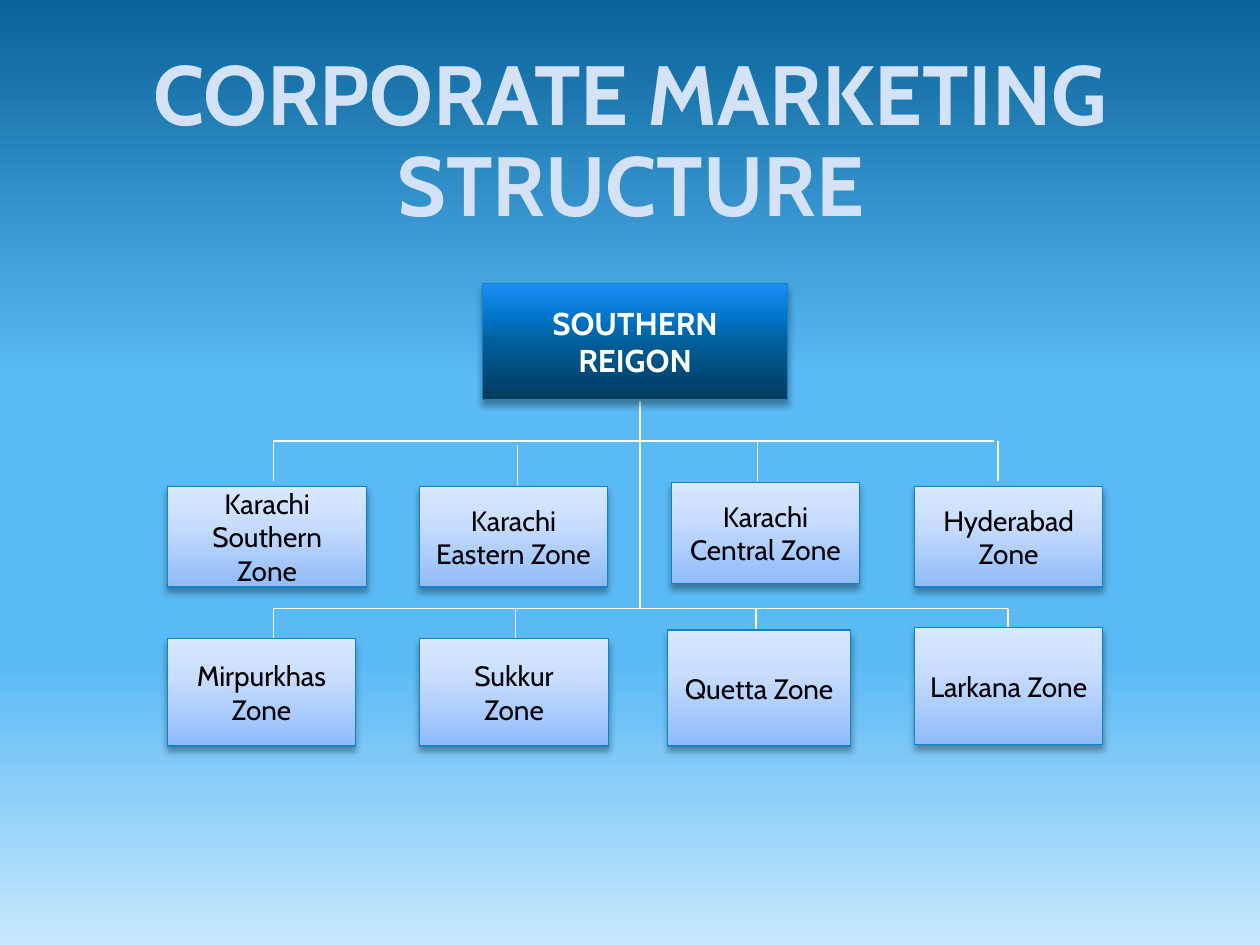
from lxml.etree import SubElement
from pptx import Presentation
from pptx.dml.color import RGBColor
from pptx.enum.shapes import MSO_CONNECTOR, MSO_SHAPE
from pptx.enum.text import MSO_ANCHOR, PP_ALIGN
from pptx.oxml.ns import qn
from pptx.util import Inches, Pt

SKY = [(0, "0A639A"), (40, "5ABAF5"), (70, "5ABAF5"), (100, "C8E8FC")]
PALE_BLUE = [(0, "90BBF9"), (65, "C9DEFF"), (100, "D9E7FF")]
DEEP_BLUE = [(0, "003B60"), (50, "005F9A"), (70, "0074C8"), (100, "1C8FF6")]

ZONES = [
    ("Karachi Southern Zone", 1.33, 3.86, 1.58, 0.8),
    ("Karachi Eastern Zone", 3.33, 3.86, 1.49, 0.8),
    ("Karachi Central Zone", 5.33, 3.83, 1.49, 0.8),
    ("Hyderabad Zone", 7.26, 3.86, 1.49, 0.8),
    ("Mirpurkhas Zone", 1.33, 5.07, 1.49, 0.85),
    ("Sukkur\nZone", 3.33, 5.07, 1.5, 0.85),
    ("Quetta Zone", 5.3, 5, 1.45, 0.92),
    ("Larkana Zone", 7.26, 4.98, 1.49, 0.93),
]
TRUNK_X = 5.08
UPPER_RAIL_Y, LOWER_RAIL_Y = 3.5, 4.83
UPPER_DROPS = [(2.17, 3.5), (4.11, 3.53), (6.01, 3.5), (7.92, 3.5)]
LOWER_DROPS = [2.17, 4.09, 6, 8]


def rgb(color):
    """Turn a hex string into a colour."""
    return RGBColor.from_string(color)


def paint_gradient(owner, fill, stops, angle):
    """Fill a shape or background with a linear gradient of several stops."""
    fill.gradient()
    fill.gradient_angle = angle
    stop_list = owner.element.find(f".//{qn('a:gsLst')}")
    for default_stop in list(stop_list):
        stop_list.remove(default_stop)
    for percent, color in stops:
        stop = SubElement(stop_list, qn("a:gs"), pos=str(percent * 1000))
        SubElement(stop, qn("a:srgbClr"), val=color)


def add_soft_shadow(box):
    """Give a box a soft shadow that falls straight down."""
    box.shadow.inherit = False
    effects = box.element.spPr.find(qn("a:effectLst"))
    shadow = SubElement(effects, qn("a:outerShdw"), blurRad=str(Pt(4)),
                        dist=str(Pt(3)), dir="5400000", rotWithShape="0")
    black = SubElement(shadow, qn("a:srgbClr"), val="000000")
    SubElement(black, qn("a:alpha"), val="35000")


def write_text(frame, text, size, color, bold=False):
    """Write centred paragraphs, one for each line of text."""
    frame.word_wrap = True
    frame.text = text
    for paragraph in frame.paragraphs:
        paragraph.alignment = PP_ALIGN.CENTER
        paragraph.font.name = "Cabin"
        paragraph.font.size = Pt(size)
        paragraph.font.bold = bold
        paragraph.font.color.rgb = rgb(color)


def add_title(slide, text):
    """Add the large heading."""
    title = slide.shapes.add_textbox(Inches(0.42), Inches(0.42), Inches(9.17), Inches(1.5))
    frame = title.text_frame
    frame.margin_left = frame.margin_right = frame.margin_top = frame.margin_bottom = 0
    write_text(frame, text, 48, "D4E2F8", bold=True)
    frame.paragraphs[0].line_spacing = 0.9


def add_unit(slide, text, left, top, width, height, stops, size, color, bold=False):
    """Add one box of the organisation chart."""
    unit = slide.shapes.add_shape(MSO_SHAPE.RECTANGLE, Inches(left), Inches(top),
                                  Inches(width), Inches(height))
    paint_gradient(unit, unit.fill, stops, 90)
    unit.line.color.rgb = rgb("0D84CD")
    unit.line.width = Pt(0.75)
    add_soft_shadow(unit)
    unit.text_frame.vertical_anchor = MSO_ANCHOR.MIDDLE
    write_text(unit.text_frame, text, size, color, bold)


def add_branch(slide, x1, y1, x2, y2):
    """Add one thin white line between two points."""
    branch = slide.shapes.add_connector(MSO_CONNECTOR.STRAIGHT, Inches(x1), Inches(y1),
                                        Inches(x2), Inches(y2))
    branch.line.color.rgb = rgb("FFFFFF")
    branch.line.width = Pt(0.75)
    SubElement(branch.element.spPr, qn("a:effectLst"))


def add_branches(slide):
    """Add the trunk, both rails and the drops to the zones."""
    add_branch(slide, TRUNK_X, 3.18, TRUNK_X, LOWER_RAIL_Y)
    add_branch(slide, 2.17, UPPER_RAIL_Y, 7.89, UPPER_RAIL_Y)
    add_branch(slide, 2.17, LOWER_RAIL_Y, 8, LOWER_RAIL_Y)
    for x, top in UPPER_DROPS:
        add_branch(slide, x, top, x, top + 0.32)
    for x in LOWER_DROPS:
        add_branch(slide, x, LOWER_RAIL_Y, x, 5.07)


def main():
    """Build the slide and save it."""
    deck = Presentation()
    deck.slide_width, deck.slide_height = Inches(10), Inches(7.5)
    slide = deck.slides.add_slide(deck.slide_layouts[6])
    paint_gradient(slide, slide.background.fill, SKY, 270)
    add_title(slide, "CORPORATE MARKETING STRUCTURE")
    add_branches(slide)
    add_unit(slide, "SOUTHERN REIGON", 3.83, 2.25, 2.42, 0.92, DEEP_BLUE, 18, "FFFFFF", bold=True)
    for name, left, top, width, height in ZONES:
        add_unit(slide, name, left, top, width, height, PALE_BLUE, 16, "000000")
    deck.save("out.pptx")


if __name__ == "__main__":
    main()
